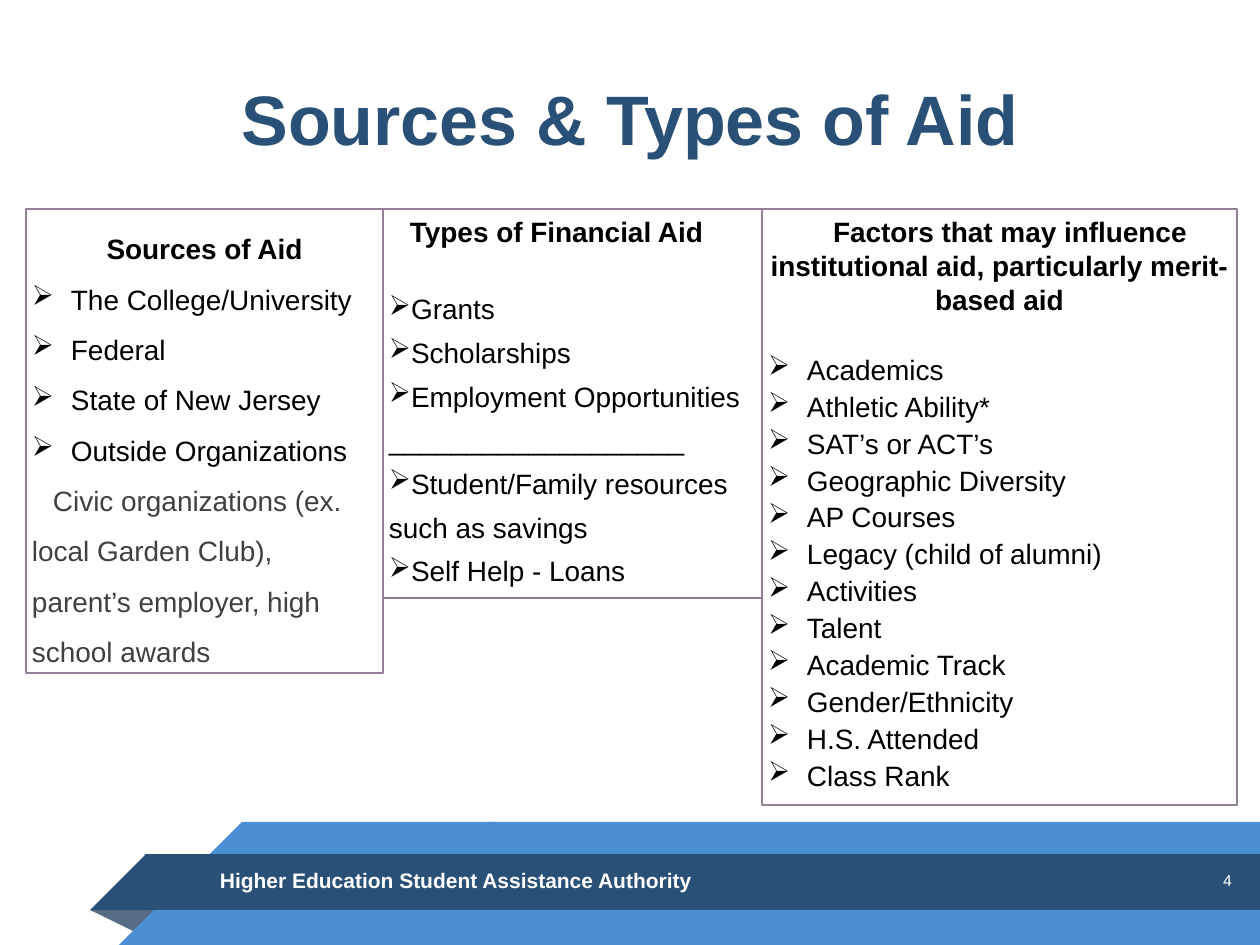
from dataclasses import dataclass

from lxml import etree
from pptx import Presentation
from pptx.dml.color import RGBColor
from pptx.enum.shapes import MSO_SHAPE
from pptx.enum.text import MSO_ANCHOR, PP_ALIGN
from pptx.oxml.ns import qn
from pptx.util import Emu, Pt

RECTANGLE = MSO_SHAPE.RECTANGLE
TOP, MIDDLE = MSO_ANCHOR.TOP, MSO_ANCHOR.MIDDLE
LEFT, CENTER, RIGHT = PP_ALIGN.LEFT, PP_ALIGN.CENTER, PP_ALIGN.RIGHT
SCALE = 914400 / 126
INSET = 6
HANGING = (39, -39)
FIRST_LINE = (0, 21)
FLUSH = (0, 0)
COLUMN_TOP = 209


@dataclass(frozen=True)
class Theme:
    font: str = "Arial"
    light_blue: str = "498FD2"
    dark_blue: str = "295076"
    fold: str = "576D83"
    border: str = "957F97"
    white: str = "FFFFFF"
    black: str = "000000"
    gray: str = "404040"
    title: int = 40
    body: int = 16
    footer: int = 12
    number: int = 9
    border_width: float = 0.75
    heading_gap: int = 19


THEME = Theme()


def px(value):
    return Emu(round(value * SCALE))


def set_values(target, values):
    for name, value in values.items():
        setattr(target, name, value)


def paint(shape, color):
    shape.shadow.inherit = False
    shape.fill.solid()
    shape.fill.fore_color.rgb = RGBColor.from_string(color)
    shape.line.fill.background()


def add_band(slide, box, color):
    paint(slide.shapes.add_shape(RECTANGLE, *map(px, box)), color)


def add_triangle(slide, points, color):
    start, *others = [(px(x), px(y)) for x, y in points]
    builder = slide.shapes.build_freeform(*start, scale=1.0)
    builder.add_line_segments(others, close=True)
    paint(builder.convert_to_shape(), color)


def set_frame(frame, anchor, wrap=True):
    margins = ("margin_left", "margin_top", "margin_right", "margin_bottom")
    set_values(frame, dict.fromkeys(margins, px(INSET)))
    set_values(frame, {"vertical_anchor": anchor, "word_wrap": wrap})


def write_paragraph(paragraph, text, size, color, bold=False, indent=FLUSH,
                    bullet=False, **layout):
    properties = paragraph._p.get_or_add_pPr()
    margin, first = indent
    properties.set("marL", str(px(margin)))
    properties.set("indent", str(px(first)))
    if bullet:
        etree.SubElement(properties, qn("a:buChar")).set("char", "➢")
    set_values(paragraph, layout)
    run = paragraph.add_run()
    run.text = text
    set_values(run.font, {"name": THEME.font, "size": Pt(size), "bold": bold})
    run.font.color.rgb = RGBColor.from_string(color)


def add_label(slide, box, text, size, color, wrap=True, **values):
    frame = slide.shapes.add_textbox(*map(px, box)).text_frame
    set_frame(frame, MIDDLE, wrap)
    write_paragraph(frame.paragraphs[0], text, size, color, **values)


def add_column(slide, left, width, height, heading, heading_format, items,
               item_format):
    shape = slide.shapes.add_shape(
        RECTANGLE, *map(px, (left, COLUMN_TOP, width, height)))
    shape.shadow.inherit = False
    shape.fill.background()
    shape.line.color.rgb = RGBColor.from_string(THEME.border)
    shape.line.width = Pt(THEME.border_width)
    frame = shape.text_frame
    set_frame(frame, TOP)
    write_paragraph(frame.paragraphs[0], heading, THEME.body, THEME.black,
                    bold=True, **heading_format)
    for text, changes in items:
        values = {"color": THEME.black, "bullet": True, "alignment": LEFT,
                  **item_format, **changes}
        write_paragraph(frame.add_paragraph(), text, THEME.body, **values)


def plain_items(*texts):
    return [(text, {}) for text in texts]


def add_footer(slide):
    add_band(slide, (489, 822, 771, 123), THEME.light_blue)
    add_triangle(slide, [(162, 910), (139, 934), (90, 910)], THEME.fold)
    add_band(slide, (242, 822, 252, 123), THEME.light_blue)
    add_triangle(slide, [(242, 945), (119, 945), (242, 822)], THEME.light_blue)
    add_band(slide, (145, 854, 349, 56), THEME.dark_blue)
    add_triangle(slide, [(146, 910), (90, 910), (146, 854)], THEME.dark_blue)
    add_band(slide, (483, 854, 777, 56), THEME.dark_blue)
    add_label(slide, (214, 862, 532, 37),
              "Higher Education Student Assistance Authority",
              THEME.footer, THEME.white, bold=True)
    add_label(slide, (1215, 864, 23, 32), "4", THEME.number, THEME.white,
              wrap=False, alignment=RIGHT)


def add_columns(slide):
    gap = {"space_after": Pt(THEME.heading_gap)}
    sources = plain_items("The College/University", "Federal",
                          "State of New Jersey", "Outside Organizations")
    sources.append((
        "Civic organizations (ex. local Garden Club), parent’s employer, "
        "high school awards",
        {"bullet": False, "indent": FIRST_LINE, "color": THEME.gray}))
    add_column(slide, 26, 357, 464, "Sources of Aid",
               {"alignment": CENTER, "line_spacing": 1.5}, sources,
               {"indent": HANGING, "line_spacing": 1.5})

    types = plain_items("Grants", "Scholarships", "Employment Opportunities")
    types.append(("___________________", {"bullet": False}))
    types += plain_items("Student/Family resources such as savings",
                         "Self Help - Loans")
    add_column(slide, 383, 379, 389, "Types of Financial Aid",
               {"alignment": LEFT, "indent": FIRST_LINE, **gap}, types,
               {"line_spacing": 1.3})

    factors = plain_items(
        "Academics", "Athletic Ability*", "SAT’s or ACT’s",
        "Geographic Diversity", "AP Courses", "Legacy (child of alumni)",
        "Activities", "Talent", "Academic Track", "Gender/Ethnicity",
        "H.S. Attended", "Class Rank")
    add_column(slide, 762, 475, 596,
               "Factors that may influence institutional aid, "
               "particularly merit-based aid",
               {"alignment": CENTER, "indent": FIRST_LINE, **gap}, factors,
               {"indent": HANGING, "line_spacing": 1.1})


def main():
    presentation = Presentation()
    set_values(presentation, {"slide_width": px(1260), "slide_height": px(945)})
    slide = presentation.slides.add_slide(presentation.slide_layouts[6])
    add_footer(slide)
    add_label(slide, (63, 39, 1134, 158), "Sources & Types of Aid",
              THEME.title, THEME.dark_blue, bold=True, alignment=CENTER)
    add_columns(slide)
    presentation.save("out.pptx")


if __name__ == "__main__":
    main()
